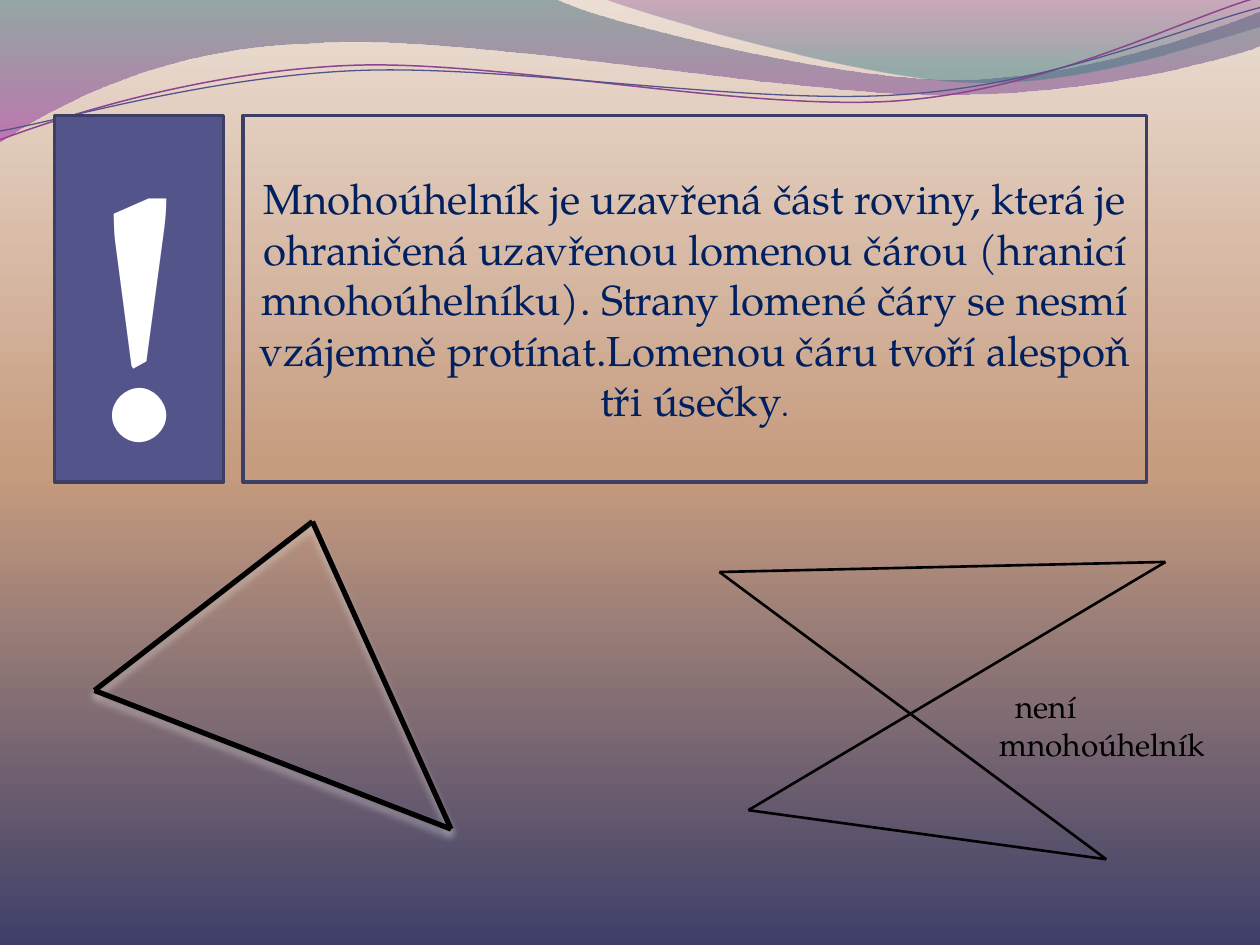
import math
from dataclasses import dataclass
from itertools import combinations
from typing import Optional

import pptx
import pptx.dml.color
import pptx.enum.shapes
import pptx.enum.text
import pptx.oxml
import pptx.oxml.ns
import pptx.util
from lxml import etree

CELL = pptx.util.Inches(0.1)  # the slide is a grid of square cells
COLS, ROWS = 100, 75
FONT = "TeX Gyre Pagella"
COLORS = {
    "sand": "ECDED4", "clay": "C69B7E", "night": "3E3F68",
    "teal": "2D6368", "magenta": "A530A9", "purple": "7F2F82", "sea": "2F7B82",
    "violet": "8D4490", "indigo": "53548A", "border": "3D3E66",
    "navy": "002060", "black": "000000", "white": "FFFFFF", "glow": "E6E6E6",
}
Point = tuple[float, float]
Stop = tuple[int, str, int]  # position %, colour name, opacity %
qn = pptx.oxml.ns.qn


@dataclass
class Wave:
    """An outline: a point is a straight step, six numbers are a Bezier curve."""
    frame: tuple[float, float, float, float]
    start: Point
    steps: list[tuple[float, ...]]
    stops: Optional[list[Stop]] = None
    color: str = ""
    width: float = 0
    rotation: float = 0


@dataclass
class Box:
    col: float
    cols: float
    text: str
    size: float
    color: str
    bold: bool = False
    fill: Optional[str] = None
    tail: str = ""


WAVES = [
    Wave((-0.1, -0.1, 100.2, 11.4), (0, 0),
         [(44, -0.1), (47.6, 1.7, 66.4, 6.3, 75.8, 6.3),
          (85.3, 6.3, 95.8, 2.6, 100, 0.9), (100.1, 3.6),
          (98.3, 4.4, 87, 7.6, 74.6, 7.5), (62.2, 7.5, 38.2, 2.8, 25.7, 3.4),
          (12.9, 3.6, 4.6, 8.3, -0.1, 11.3), (0, 0)],
         stops=[(0, "teal", 45), (100, "magenta", 55)]),
    Wave((47.9, -0.1, 52.1, 7), (47.9, -0.1),
         [(50.9, 1.1, 68.2, 6.2, 76.9, 6.5), (85.6, 6.9, 96.1, 3.2, 100, 2.1),
          (100, 0), (47.9, -0.1)],
         stops=[(0, "purple", 30), (80, "sea", 45)]),
    Wave((-0.2, 2.2, 100.2, 7.1), (0, 11.1),
         [(4.8, 9.3, 15.8, 5.7, 27.7, 5.2), (39.5, 4.7, 59.3, 8.9, 71.3, 8),
          (83.3, 7.1, 93.8, 1.5, 99.8, -0.2)],
         color="violet", width=0.85, rotation=357.3),
    Wave((-0.2, 3, 100.3, 5.8), (0, 10.4),
         [(4.7, 9.6, 16.4, 6.1, 28.3, 5.6), (40.3, 5.1, 59.7, 8.4, 71.7, 7.5),
          (83.6, 6.7, 94.1, 2.1, 100, 0.6)],
         color="indigo", width=0.75, rotation=357.3),
]
BOXES = [
    Box(4.34, 13.4, "!", 199, "white", bold=True, fill="indigo"),
    Box(19.3, 71.7, "Mnohoúhelník je uzavřená část roviny, která je ohraničená "
        "uzavřenou lomenou čárou (hranicí mnohoúhelníku). Strany lomené čáry se nesmí "
        "vzájemně protínat.Lomenou čáru tvoří alespoň tři úsečky", 24, "navy", tail="."),
]
BOX_ROW, BOX_ROWS = 9.17, 29.1
TRIANGLE = [(24.8, 41.4), (7.5, 54.8), (35.8, 65.8)]
CROSSED = [(57.1, 45.4), (87.8, 68.2), (59.4, 64.3), (92.5, 44.6)]


def cells(*values: float) -> list[int]:
    return [round(v * CELL) for v in values]


def rgb(name: str) -> pptx.dml.color.RGBColor:
    return pptx.dml.color.RGBColor.from_string(COLORS[name])


def set_line(shape, color: str, width: float) -> None:
    shape.line.color.rgb = rgb(color)
    shape.line.width = pptx.util.Pt(width)


def set_gradient(fill, holder, stops: list[Stop]) -> None:
    """Fill from top to bottom; holder is the element that contains the fill."""
    fill.gradient()
    fill.gradient_angle = 270
    gs_list = holder.find(".//" + qn("a:gsLst"))
    for gs in list(gs_list):
        gs_list.remove(gs)
    for pos, color, opacity in stops:
        gs = etree.SubElement(gs_list, qn("a:gs"), pos=str(pos * 1000))
        clr = etree.SubElement(gs, qn("a:srgbClr"), val=COLORS[color])
        if opacity < 100:
            etree.SubElement(clr, qn("a:alpha"), val=str(opacity * 1000))


def to_frame(wave: Wave, x: float, y: float) -> list[int]:
    """Place a slide point inside the wave's frame, before its rotation."""
    left, top, width, height = wave.frame
    dx, dy = x - left - width / 2, y - top - height / 2
    turn = math.radians(-wave.rotation)
    return cells(dx * math.cos(turn) - dy * math.sin(turn) + width / 2,
                 dx * math.sin(turn) + dy * math.cos(turn) + height / 2)


def draw_curves(outline, wave: Wave) -> None:
    """Write the steps of a wave into an a:path element."""
    for child in list(outline):
        outline.remove(child)
    for key, length in zip("wh", cells(*wave.frame[2:])):
        outline.set(key, str(length))
    for i, step in enumerate([wave.start, *wave.steps]):
        tag = "a:cubicBezTo" if len(step) == 6 else "a:lnTo" if i else "a:moveTo"
        command = etree.SubElement(outline, qn(tag))
        for x, y in zip(step[::2], step[1::2]):
            px, py = to_frame(wave, x, y)
            etree.SubElement(command, qn("a:pt"), x=str(px), y=str(py))
    if wave.stops:
        etree.SubElement(outline, qn("a:close"))


def add_wave(s, wave: Wave) -> None:
    builder = s.shapes.build_freeform(*cells(*wave.start))
    builder.add_line_segments([tuple(cells(*step[-2:])) for step in wave.steps])
    sp = builder.convert_to_shape()
    sp.left, sp.top, sp.width, sp.height = cells(*wave.frame)
    sp.rotation = wave.rotation
    draw_curves(sp._element.spPr.find(".//" + qn("a:path")), wave)
    sp.shadow.inherit = False
    if wave.stops:
        set_gradient(sp.fill, sp._element.spPr, wave.stops)
        sp.line.fill.background()
    else:
        sp.fill.background()
        set_line(sp, wave.color, wave.width)


def set_font(p, size: float, color: str, bold: bool = False) -> None:
    p.font.name, p.font.size, p.font.bold = FONT, pptx.util.Pt(size), bold
    p.font.color.rgb = rgb(color)


def add_box(s, box: Box) -> None:
    sp = s.shapes.add_shape(pptx.enum.shapes.MSO_SHAPE.RECTANGLE,
                            *cells(box.col, BOX_ROW, box.cols, BOX_ROWS))
    sp.shadow.inherit = False
    if box.fill:
        sp.fill.solid()
        sp.fill.fore_color.rgb = rgb(box.fill)
    else:
        sp.fill.background()
    set_line(sp, "border", 2)
    tf = sp.text_frame
    tf.word_wrap = True
    tf.vertical_anchor = pptx.enum.text.MSO_ANCHOR.MIDDLE
    p = tf.paragraphs[0]
    p.alignment = pptx.enum.text.PP_ALIGN.CENTER
    set_font(p, box.size, box.color, box.bold)
    p.add_run().text = box.text
    if box.tail:
        r = p.add_run()
        r.text = box.tail
        r.font.size = pptx.util.Pt(18)


def add_side(s, a: Point, b: Point, width: float, glow: bool = False) -> None:
    """Draw one side of a figure, with a pale shadow below it if glow is set."""
    side = s.shapes.add_connector(pptx.enum.shapes.MSO_CONNECTOR.STRAIGHT, *cells(*a, *b))
    set_line(side, "black", width)
    effects = etree.SubElement(side._element.spPr, qn("a:effectLst"))
    if glow:
        shadow = etree.SubElement(
            effects, qn("a:outerShdw"), blurRad=str(pptx.util.Pt(4.5)),
            dist=str(pptx.util.Pt(3)), dir="5400000", rotWithShape="0")
        clr = etree.SubElement(shadow, qn("a:srgbClr"), val=COLORS["glow"])
        etree.SubElement(clr, qn("a:alpha"), val="48000")


def add_caption(s) -> None:
    tf = s.shapes.add_textbox(*cells(78.35, 54.05, 20.5, 7.1)).text_frame
    tf.word_wrap = True
    p = tf.paragraphs[0]
    p.text = "není mnohoúhelník"
    set_font(p, 18, "black")
    p._p.get_or_add_pPr().set("indent", str(cells(1.25)[0]))


def main() -> None:
    prs = pptx.Presentation()
    prs.slide_width, prs.slide_height = cells(COLS, ROWS)
    s = prs.slides.add_slide(prs.slide_layouts[6])
    set_gradient(s.background.fill, s._element.cSld,
                 [(0, "sand", 100), (50, "clay", 100), (100, "night", 100)])
    for wave in WAVES:
        add_wave(s, wave)
    for box in BOXES:
        add_box(s, box)
    for a, b in combinations(TRIANGLE, 2):
        add_side(s, a, b, 3, glow=True)
    for a, b in zip(CROSSED, CROSSED[1:] + CROSSED[:1]):
        add_side(s, a, b, 1.5)
    add_caption(s)
    prs.save("out.pptx")


if __name__ == "__main__":
    main()
